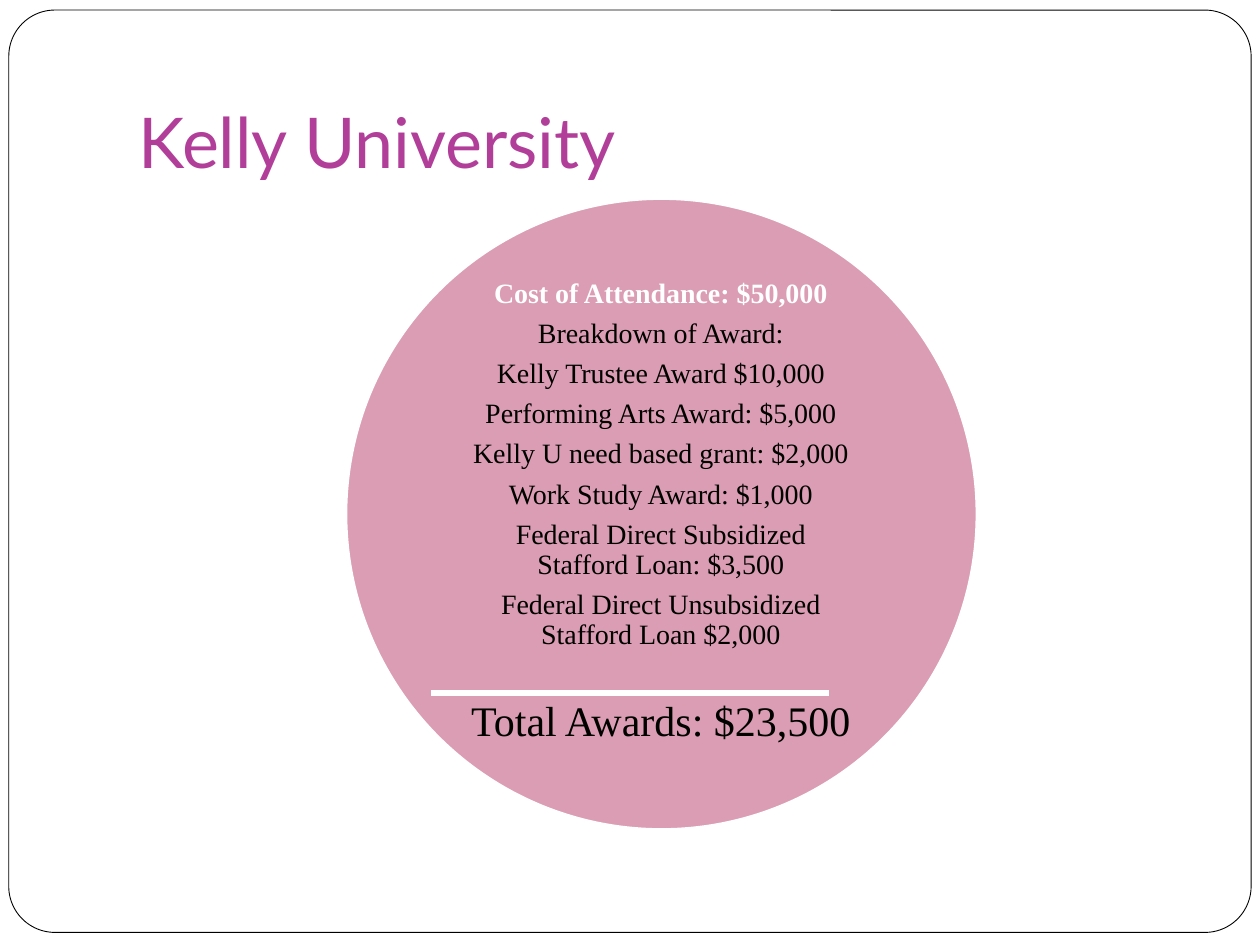
"""Build the Kelly University award breakdown slide."""
import pptx
import pptx.dml.color
import pptx.enum.shapes
import pptx.enum.text
import pptx.oxml.ns
import pptx.util
from lxml import etree

Inches = pptx.util.Inches
Pt = pptx.util.Pt
RGBColor = pptx.dml.color.RGBColor
SHAPE = pptx.enum.shapes.MSO_SHAPE
ALIGN = pptx.enum.text.PP_ALIGN
ANCHOR = pptx.enum.text.MSO_ANCHOR
qn = pptx.oxml.ns.qn

WHITE = RGBColor(0xFF, 0xFF, 0xFF)
BLACK = RGBColor(0x00, 0x00, 0x00)
PURPLE = RGBColor(0xB1, 0x3F, 0x9A)
ROSE = RGBColor(0xB8, 0x3D, 0x68)

AWARDS = [
    "Breakdown of Award:",
    "Kelly Trustee Award $10,000",
    "Performing Arts Award: $5,000",
    "Kelly U need based grant: $2,000",
    "Work Study Award: $1,000",
    "Federal Direct Subsidized Stafford Loan: $3,500",
    "Federal Direct Unsubsidized Stafford Loan $2,000",
]


class SlideBuilder:
    title_font = {"name": "Lato", "size": Pt(40)}
    body_font = {"name": "Times New Roman", "size": Pt(16), "bold": False}
    body_para = {"alignment": ALIGN.CENTER, "line_spacing": 0.9, "space_after": Pt(5.6)}

    def __init__(self, slide):
        self.slide = slide

    def apply(self, target, values):
        for name, value in values.items():
            setattr(target, name, value)

    def shape(self, kind, box, fill, line, width, alpha=None):
        sp = self.slide.shapes.add_shape(kind, *map(Inches, box))
        sp.shadow.inherit = False
        sp.fill.solid()
        sp.fill.fore_color.rgb = fill
        sp.line.color.rgb = line
        sp.line.width = Pt(width)
        if alpha is not None:
            color = sp.fill._xPr.find(qn("a:solidFill"))[0]
            etree.SubElement(color, qn("a:alpha")).set("val", str(alpha * 1000))
        return sp

    def text(self, box, insets, anchor, paragraphs):
        tf = self.slide.shapes.add_textbox(*map(Inches, box)).text_frame
        sides = ("margin_left", "margin_top", "margin_right", "margin_bottom")
        self.apply(tf, dict(zip(sides, map(Inches, insets))))
        self.apply(tf, {"word_wrap": True, "vertical_anchor": anchor})
        for i, (words, color, font, para) in enumerate(paragraphs):
            p = tf.add_paragraph() if i else tf.paragraphs[0]
            self.apply(p, para)
            r = p.add_run()
            r.text = words
            self.apply(r.font, font)
            r.font.color.rgb = color

    def line(self, start, end, color, width):
        points = map(Inches, (*start, *end))
        cn = self.slide.shapes.add_connector(pptx.enum.shapes.MSO_CONNECTOR.STRAIGHT, *points)
        cn.line.color.rgb = color
        cn.line.width = Pt(width)
        etree.SubElement(cn._element.spPr, qn("a:effectLst"))


def main():
    prs = pptx.Presentation()
    prs.slide_width, prs.slide_height = Inches(10), Inches(7.5)
    s = SlideBuilder(prs.slides.add_slide(prs.slide_layouts[6]))

    frame = s.shape(SHAPE.ROUNDED_RECTANGLE, (0.07, 0.08, 9.86, 7.32), WHITE, BLACK, 0.5)
    frame.adjustments[0] = 0.05
    s.text((1, 0.3, 8.5, 1.25), (0.1, 0.05, 0.1, 0.1), ANCHOR.BOTTOM,
           [("Kelly University", PURPLE, s.title_font, {})])

    s.shape(SHAPE.OVAL, (2.75, 1.58, 5, 5), ROSE, WHITE, 1, alpha=50)
    cost = ("Cost of Attendance: $50,000", WHITE, {**s.body_font, "bold": True}, s.body_para)
    awards = [(award, BLACK, s.body_font, s.body_para) for award in AWARDS]
    total = ("Total Awards: $23,500", BLACK, {**s.body_font, "size": Pt(24)},
             {**s.body_para, "space_before": Pt(22.8)})
    s.text((3.48, 2.2, 3.53, 4.1), (0.25, 0.02, 0.25, 0.02), ANCHOR.TOP,
           [cost, *awards, total])
    s.line((3.42, 5.5), (6.58, 5.5), WHITE, 3)

    prs.save("out.pptx")


if __name__ == "__main__":
    main()
